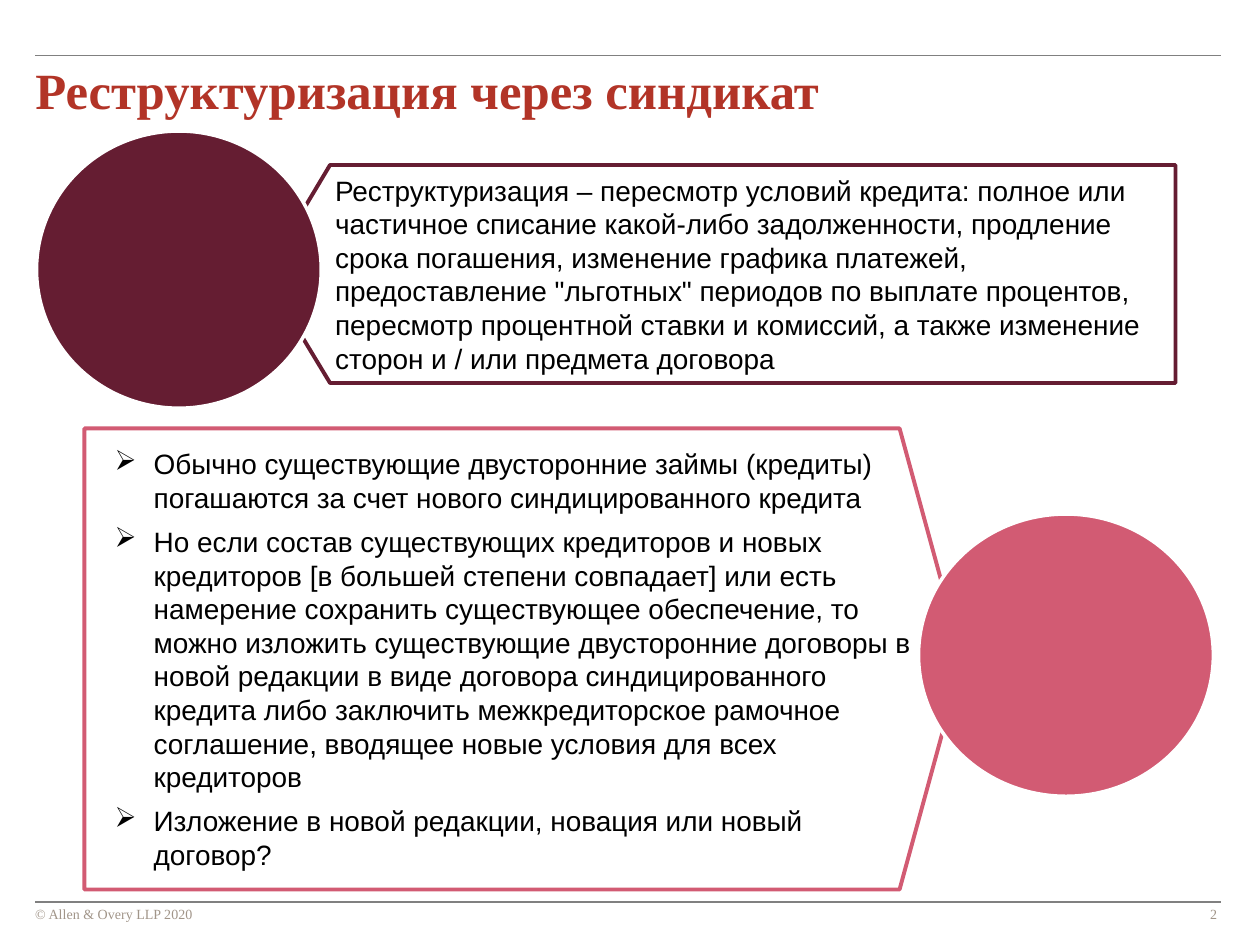
from lxml import etree
from pptx import Presentation
from pptx.dml.color import RGBColor
from pptx.enum.shapes import MSO_CONNECTOR, MSO_SHAPE
from pptx.enum.text import MSO_ANCHOR, MSO_AUTO_SIZE, PP_ALIGN
from pptx.oxml.ns import qn
from pptx.util import Inches, Pt

STRAIGHT = MSO_CONNECTOR.STRAIGHT
OVAL = MSO_SHAPE.OVAL
MIDDLE = MSO_ANCHOR.MIDDLE
NO_AUTOFIT = MSO_AUTO_SIZE.NONE
LEFT, RIGHT = PP_ALIGN.LEFT, PP_ALIGN.RIGHT

WHITE = RGBColor(0xFF, 0xFF, 0xFF)
BLACK = RGBColor(0x00, 0x00, 0x00)
GRAY = RGBColor(0x80, 0x80, 0x80)
TAUPE = RGBColor(0xA1, 0x95, 0x89)
RED = RGBColor(0xB2, 0x34, 0x27)
BURGUNDY = RGBColor(0x65, 0x1D, 0x32)
ROSE = RGBColor(0xD2, 0x5B, 0x73)

DEFINITION = [
    'Реструктуризация – пересмотр условий кредита: полное или частичное списание '
    'какой-либо задолженности, продление срока погашения, изменение графика платежей, '
    'предоставление "льготных" периодов по выплате процентов, пересмотр процентной '
    'ставки и комиссий, а также изменение сторон и / или предмета договора',
]
OPTIONS = [
    "Обычно существующие двусторонние займы (кредиты)\n"
    "погашаются за счет нового синдицированного кредита",
    "Но если состав существующих кредиторов и новых кредиторов [в большей степени "
    "совпадает] или есть намерение сохранить существующее обеспечение, то можно изложить "
    "существующие двусторонние договоры в новой редакции в виде договора синдицированного\n"
    "кредита либо заключить межкредиторское рамочное соглашение, вводящее новые условия "
    "для всех\nкредиторов",
    "Изложение в новой редакции, новация или новый\nдоговор?",
]


def set_margins(frame, left=0, top=0, right=0, bottom=0):
    frame.word_wrap = True
    frame.margin_left, frame.margin_top = Inches(left), Inches(top)
    frame.margin_right, frame.margin_bottom = Inches(right), Inches(bottom)


def style_font(paragraph, name, size, color, bold=False):
    font = paragraph.font
    font.name, font.size, font.bold = name, Pt(size), bold
    font.color.rgb = color


prs = Presentation()
prs.slide_width, prs.slide_height = Inches(10), Inches(7.5)
slide = prs.slides.add_slide(prs.slide_layouts[5])
shapes = slide.shapes

for y in (0.44, 7.16):
    rule = shapes.add_connector(STRAIGHT, Inches(0.28), Inches(y), Inches(9.69), Inches(y))
    rule.line.color.rgb = GRAY
    rule.line.width = Pt(1)
    etree.SubElement(rule._element.spPr, qn("a:effectLst"))

for text, left, width, align in (
    ("© Allen & Overy LLP 2020", 0.28, 7.17, LEFT),
    ("2", 9.19, 0.47, RIGHT),
):
    footer = shapes.add_textbox(Inches(left), Inches(7.19), Inches(width), Inches(0.13))
    set_margins(footer.text_frame)
    paragraph = footer.text_frame.paragraphs[0]
    paragraph.text = text
    paragraph.alignment = align
    style_font(paragraph, "Times New Roman", 8, TAUPE)

title = shapes.title
title.left, title.top = Inches(0.28), Inches(0.46)
title.width, title.height = Inches(9.37), Inches(0.49)
set_margins(title.text_frame)
title.text_frame.auto_size = NO_AUTOFIT
title.text_frame.vertical_anchor = MIDDLE
heading = title.text_frame.paragraphs[0]
heading.text = "Реструктуризация через синдикат"
heading.alignment = LEFT
style_font(heading, "Times New Roman", 29, RED, bold=True)

definition_outline = [(9.33, 3.04), (2.62, 3.04), (2.1, 2.18), (2.62, 1.31), (9.33, 1.31)]
options_outline = [(0.67, 7.06), (7.14, 7.06), (7.64, 5.23), (7.14, 3.4), (0.67, 3.4)]

for outline, color, fill, inset, texts, bulleted, circle_box in (
    (definition_outline, BURGUNDY, WHITE, 0.56, DEFINITION, False, (0.29, 1.04, 2.26, 2.2)),
    (options_outline, ROSE, None, 0.24, OPTIONS, True, (7.29, 4.08, 2.34, 2.24)),
):
    corners = [(Inches(x), Inches(y)) for x, y in outline]
    builder = shapes.build_freeform(*corners[0])
    builder.add_line_segments(corners[1:], close=True)
    panel = builder.convert_to_shape()
    panel.shadow.inherit = False
    if fill is None:
        panel.fill.background()
    else:
        panel.fill.solid()
        panel.fill.fore_color.rgb = fill
    panel.line.color.rgb = color
    panel.line.width = Pt(2.25)

    frame = panel.text_frame
    set_margins(frame, inset, 0.07, 0.12, 0.07)
    frame.vertical_anchor = MIDDLE
    for index, text in enumerate(texts):
        paragraph = frame.add_paragraph() if index else frame.paragraphs[0]
        paragraph.text = text
        paragraph.alignment = LEFT
        paragraph.space_after = Pt(6)
        if bulleted:
            properties = paragraph._p.get_or_add_pPr()
            properties.set("marL", str(Inches(0.31)))
            properties.set("indent", str(-Inches(0.31)))
            etree.SubElement(properties, qn("a:buChar"), char="➢")
        style_font(paragraph, "Arial", 16, BLACK)

    circle = shapes.add_shape(OVAL, *map(Inches, circle_box))
    circle.shadow.inherit = False
    circle.fill.solid()
    circle.fill.fore_color.rgb = color
    circle.line.color.rgb = WHITE
    circle.line.width = Pt(2)

prs.save("out.pptx")
